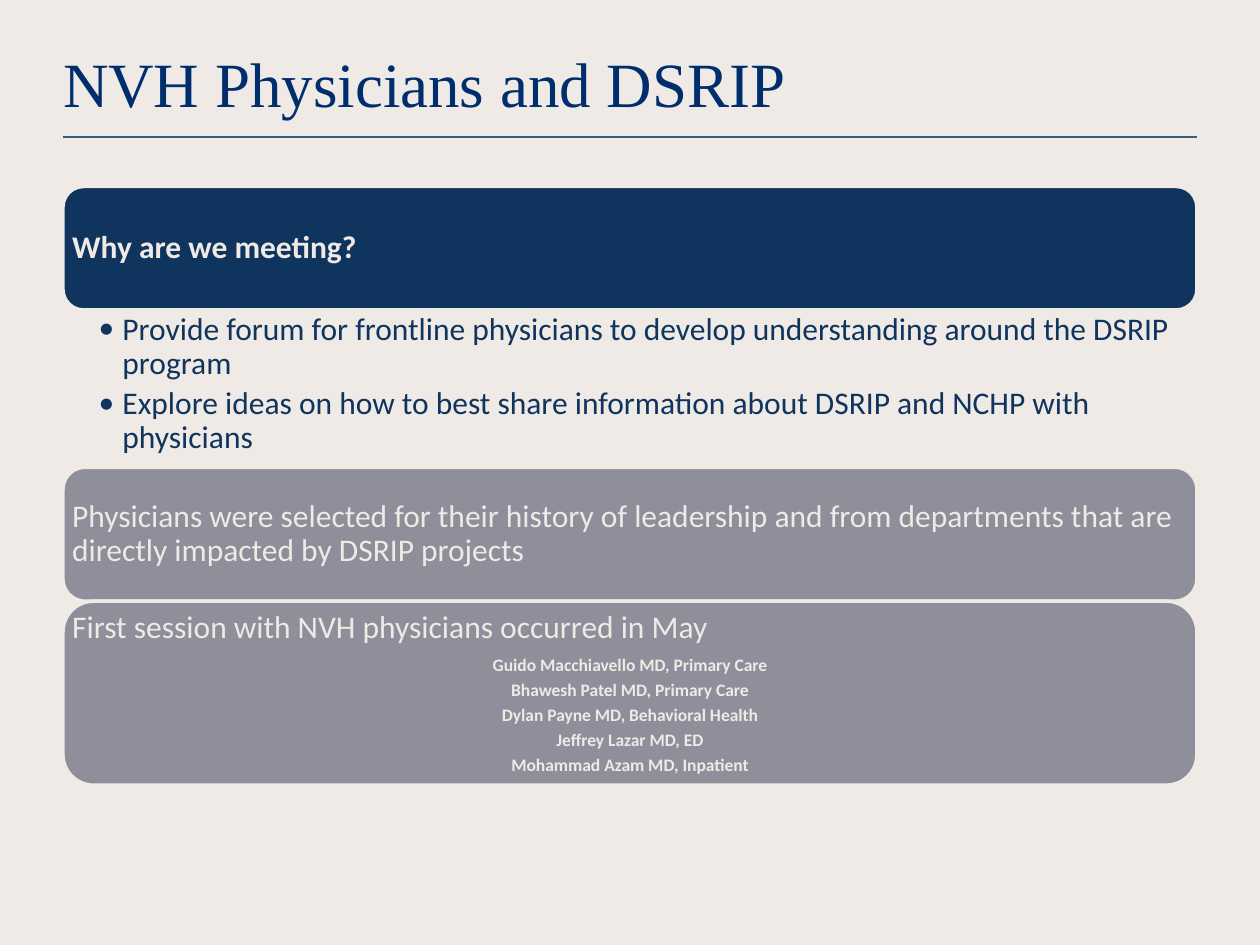
"""Build the slide on NVH physicians and DSRIP."""
from lxml.etree import SubElement
from pptx import Presentation
from pptx.dml.color import RGBColor
from pptx.enum.shapes import MSO_CONNECTOR, MSO_SHAPE
from pptx.enum.text import MSO_ANCHOR, MSO_AUTO_SIZE, PP_ALIGN
from pptx.oxml.ns import qn
from pptx.util import Cm, Pt

COLORS = {name: RGBColor.from_string(value) for name, value in {
    "paper": "F0EAE6", "title": "002E6D", "rule": "326084",
    "navy": "0F345E", "gray": "8E8F9A",
}.items()}
LEFT, WIDTH = 1.27, 22.86
CORNER_INSET = 0.05

PANELS = [
    (3.76, 2.49, "navy", [("Why are we meeting?", 18, True)]),
    (9.42, 2.7, "gray", [("Physicians were selected for their history of leadership and from "
                          "departments that are directly impacted by DSRIP projects", 18, False)]),
    (12.12, 3.71, "gray", [
        ("First session with NVH physicians occurred in May", 18, False),
        ("Guido Macchiavello MD, Primary Care", 10, True),
        ("Bhawesh Patel MD, Primary Care", 10, True),
        ("Dylan Payne MD, Behavioral Health", 10, True),
        ("Jeffrey Lazar MD, ED", 10, True),
        ("Mohammad Azam MD, Inpatient", 10, True),
    ]),
]
REASONS = [
    "Provide forum for frontline physicians to develop understanding around the DSRIP program",
    "Explore ideas on how to best share information about DSRIP and NCHP with physicians",
]


def set_frame(frame, anchor, left, top, right, bottom):
    frame.word_wrap = True
    frame.auto_size = MSO_AUTO_SIZE.NONE
    frame.vertical_anchor = anchor
    frame.margin_left, frame.margin_top = Cm(left), Cm(top)
    frame.margin_right, frame.margin_bottom = Cm(right), Cm(bottom)


def write_para(frame, index, text, size, color, font="Calibri", bold=False, after=0, spacing=0.9):
    para = frame.paragraphs[0] if index == 0 else frame.add_paragraph()
    para.text = text
    para.alignment = PP_ALIGN.LEFT
    para.line_spacing = spacing
    para.space_before, para.space_after = Pt(0), Pt(after)
    para.font.name, para.font.size, para.font.bold = font, Pt(size), bold
    para.font.color.rgb = COLORS[color]
    return para


deck = Presentation()
deck.slide_width, deck.slide_height = Cm(25.4), Cm(19.05)
page = deck.slides.add_slide(deck.slide_layouts[5])
page.background.fill.solid()
page.background.fill.fore_color.rgb = COLORS["paper"]

title = page.shapes.title
title.left, title.top, title.width, title.height = Cm(LEFT), Cm(0.76), Cm(WIDTH), Cm(1.8)
set_frame(title.text_frame, MSO_ANCHOR.MIDDLE, 0, 0.13, 0, 0.13)
write_para(title.text_frame, 0, "NVH Physicians and DSRIP", 36, "title",
           font="Times New Roman", spacing=1.0)

rule = page.shapes.add_connector(
    MSO_CONNECTOR.STRAIGHT, Cm(LEFT), Cm(2.76), Cm(LEFT + WIDTH), Cm(2.76))
rule.line.color.rgb = COLORS["rule"]
rule.line.width = Pt(1.25)
SubElement(rule._element.spPr, qn("a:effectLst"))

for top, height, fill, lines in PANELS:
    panel = page.shapes.add_shape(
        MSO_SHAPE.ROUNDED_RECTANGLE, Cm(LEFT), Cm(top), Cm(WIDTH), Cm(height))
    panel.shadow.inherit = False
    panel.fill.solid()
    panel.fill.fore_color.rgb = COLORS[fill]
    panel.line.color.rgb = COLORS["paper"]
    panel.line.width = Pt(2)
    margin = max(0, 0.19 - CORNER_INSET * height)
    set_frame(panel.text_frame, MSO_ANCHOR.MIDDLE, margin, margin, margin, margin)
    for index, (text, size, bold) in enumerate(lines):
        para = write_para(panel.text_frame, index, text, size, "paper",
                          bold=bold, after=0.35 * size)
        if index:
            para.alignment = PP_ALIGN.CENTER

box = page.shapes.add_textbox(Cm(LEFT), Cm(6.25), Cm(WIDTH), Cm(3.17))
set_frame(box.text_frame, MSO_ANCHOR.TOP, 0.72, 0.06, 0.36, 0.06)
for index, text in enumerate(REASONS):
    para = write_para(box.text_frame, index, text, 18, "navy", after=3.6)
    para.level = 1
    props = para._p.get_or_add_pPr()
    props.set("marL", str(Cm(0.48)))
    props.set("indent", str(-Cm(0.48)))
    for tag, attributes in (("a:buFont", {"typeface": "Calibri"}), ("a:buChar", {"char": "•"})):
        bullet = props.makeelement(qn(tag), attributes)
        props.insert_element_before(bullet, "a:tabLst", "a:defRPr", "a:extLst")

deck.save("out.pptx")
